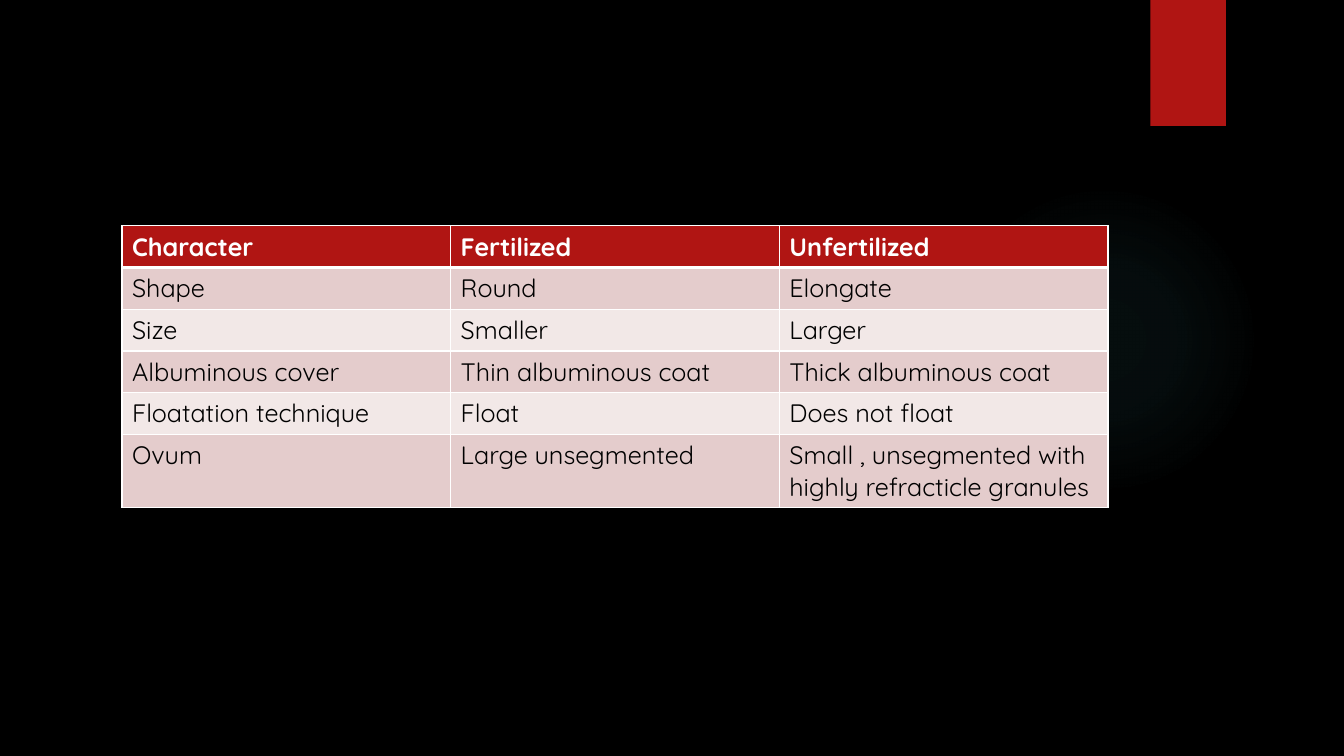
from lxml import etree
from pptx import Presentation
from pptx.dml.color import RGBColor
from pptx.enum.shapes import MSO_SHAPE
from pptx.oxml import parse_xml
from pptx.util import Inches, Pt

RECT, OVAL = MSO_SHAPE.RECTANGLE, MSO_SHAPE.OVAL
NS = "http://schemas.openxmlformats.org/drawingml/2006/main"
RED, WHITE, BLACK = "B01513", "FFFFFF", "000000"
BANDS = ["E4CCCC", "F2E8E7"]
COL, ROW = 3.26, 0.41
ROWS = [
    ["Character", "Fertilized", "Unfertilized"],
    ["Shape", "Round", "Elongate"],
    ["Size", "Smaller", "Larger"],
    ["Albuminous cover", "Thin albuminous coat", "Thick albuminous coat"],
    ["Floatation technique", "Float", "Does not float"],
    ["Ovum", "Large unsegmented",
     "Small , unsegmented with highly refracticle granules"],
]


def paint(fill, color):
    fill.solid()
    fill.fore_color.rgb = RGBColor.from_string(color)


def edge(cell, side, width):
    """Draw a white border on one side (L, R, T or B) of a cell."""
    props = cell._tc.get_or_add_tcPr()
    line = etree.SubElement(props, f"{{{NS}}}ln{side}", w=str(Pt(width)))
    fill = etree.SubElement(line, f"{{{NS}}}solidFill")
    etree.SubElement(fill, f"{{{NS}}}srgbClr", val=WHITE)


prs = Presentation()
prs.slide_width, prs.slide_height = Inches(13.33), Inches(7.5)
slide = prs.slides.add_slide(prs.slide_layouts[6])
paint(slide.background.fill, BLACK)

# Faint round glow
glow = slide.shapes.add_shape(
    OVAL, Inches(9.41), Inches(1.83), Inches(3.08), Inches(3.08))
glow.shadow.inherit = False
glow.line.fill.background()
stops = "".join(
    f'<a:gs pos="{pos * 1000}"><a:srgbClr val="50B9C1">'
    f'<a:alpha val="{alpha * 1000}"/></a:srgbClr></a:gs>'
    for pos, alpha in [(0, 7), (36, 6), (69, 0)])
glow._element.spPr.find(f"{{{NS}}}prstGeom").addnext(parse_xml(
    f'<a:gradFill xmlns:a="{NS}"><a:gsLst>{stops}</a:gsLst><a:path path="circle">'
    '<a:fillToRect l="50000" t="50000" r="50000" b="50000"/></a:path></a:gradFill>'))

# Red tab at the top edge
tab = slide.shapes.add_shape(RECT, Inches(11.41), 0, Inches(0.75), Inches(1.25))
tab.shadow.inherit = False
paint(tab.fill, RED)
tab.line.fill.background()
shade = tab._element.spPr.find(f"{{{NS}}}effectLst")
shade.append(parse_xml(
    f'<a:outerShdw xmlns:a="{NS}" blurRad="{Pt(3)}" dist="{Pt(2)}" dir="5400000">'
    f'<a:srgbClr val="{BLACK}"><a:alpha val="45000"/></a:srgbClr></a:outerShdw>'))

# Comparison table
table = slide.shapes.add_table(
    len(ROWS), len(ROWS[0]), Inches(1.21), Inches(2.24),
    Inches(COL * len(ROWS[0])), Inches(ROW * len(ROWS))).table
for col in table.columns:
    col.width = Inches(COL)
for r, words in enumerate(ROWS):
    table.rows[r].height = Inches(ROW)
    head = r == 0
    for c, word in enumerate(words):
        cell = table.cell(r, c)
        for side in "LRTB":
            thick = (head and side == "B") or (r == 1 and side == "T")
            edge(cell, side, 3 if thick else 1)
        paint(cell.fill, RED if head else BANDS[(r - 1) % 2])
        cell.text_frame.text = word
        font = cell.text_frame.paragraphs[0].runs[0].font
        font.name, font.size, font.bold = "Quicksand", Pt(18), head
        paint(font.fill, WHITE if head else BLACK)

prs.save("out.pptx")
